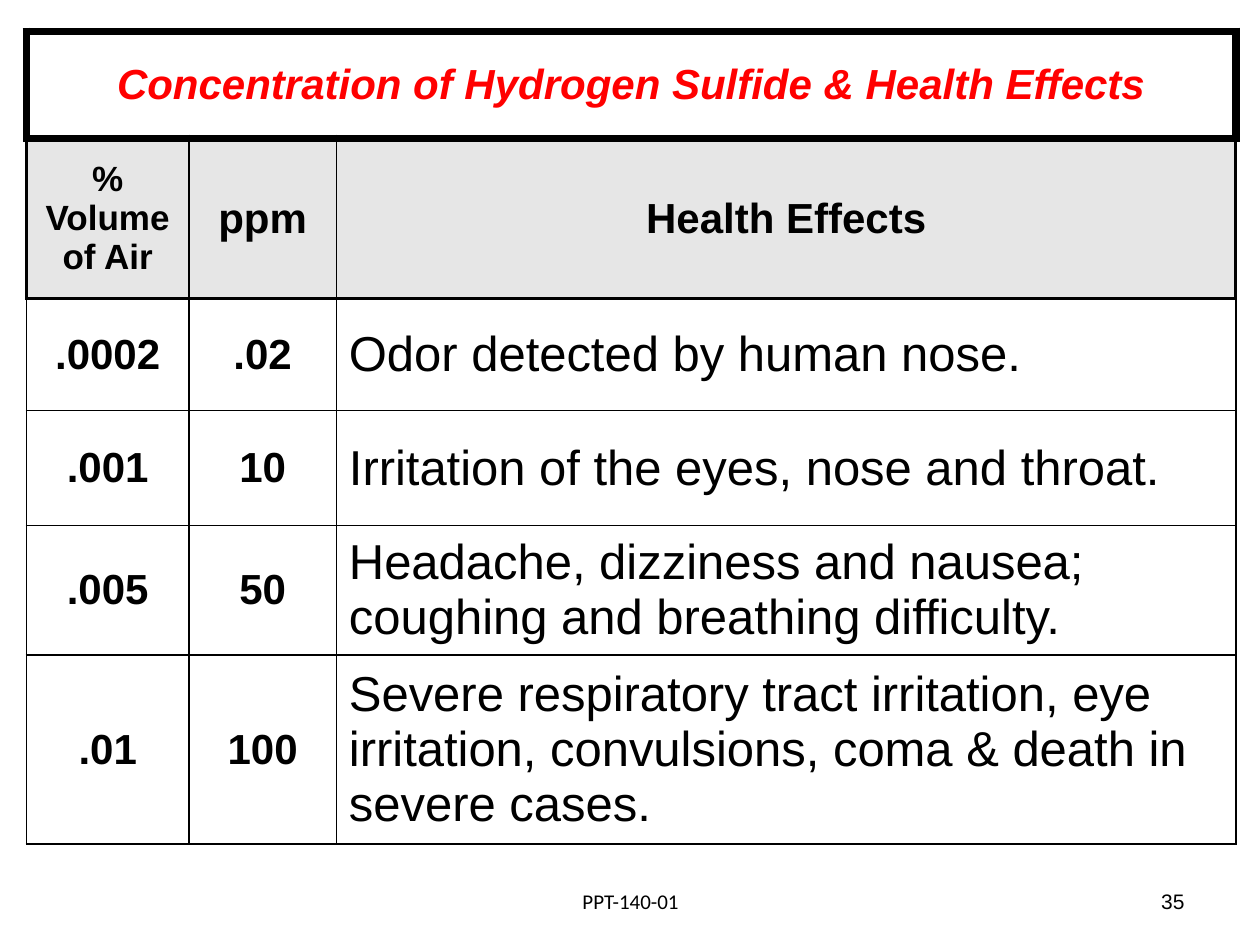
from lxml import etree
from pptx import Presentation
from pptx.dml.color import RGBColor
from pptx.enum.text import MSO_ANCHOR, PP_ALIGN
from pptx.oxml.ns import qn
from pptx.util import Inches, Pt

LEFT, CENTER, RIGHT = PP_ALIGN.LEFT, PP_ALIGN.CENTER, PP_ALIGN.RIGHT
MIDDLE = MSO_ANCHOR.MIDDLE
COLORS = {"text": "000000", "title": "FF0000", "header": "E6E6E6", "line": "000000"}


def write(tf, text, size=24, color="text", bold=False, italic=False,
          align=CENTER, font="Arial"):
    tf.word_wrap = True
    p = tf.paragraphs[0]
    p.alignment = align
    r = p.add_run()
    r.text = text
    r.font.name, r.font.size = font, Pt(size)
    r.font.bold, r.font.italic = bold, italic
    r.font.color.rgb = RGBColor.from_string(COLORS[color])


def set_borders(cell, **widths):
    tcPr = cell._tc.get_or_add_tcPr()
    for i, side in enumerate("LRTB"):
        ln = etree.Element(qn(f"a:ln{side}"), w=str(Pt(widths[side])))
        fill = etree.SubElement(ln, qn("a:solidFill"))
        etree.SubElement(fill, qn("a:srgbClr"), val=COLORS["line"])
        tcPr.insert(i, ln)


prs = Presentation()
prs.slide_width, prs.slide_height = Inches(10), Inches(7.5)
s = prs.slides.add_slide(prs.slide_layouts[6])

# Table grid
col_widths = [1.29, 1.17, 7.14]
row_heights = [0.85, 1.27, 0.89, 0.91, 1.03, 1.5]
rows = [
    ("Concentration of Hydrogen Sulfide & Health Effects", "", ""),
    ("% Volume of Air", "ppm", "Health Effects"),
    (".0002", ".02", "Odor detected by human nose."),
    (".001", "10", "Irritation of the eyes, nose and throat."),
    (".005", "50", "Headache, dizziness and nausea; coughing and breathing difficulty."),
    (".01", "100", "Severe respiratory tract irritation, eye irritation, "
                   "convulsions, coma & death in severe cases."),
]
table = s.shapes.add_table(
    len(rows), len(col_widths), Inches(0.21), Inches(0.25),
    Inches(sum(col_widths)), Inches(sum(row_heights))).table
table.first_row = table.horz_banding = False
for col, width in zip(table.columns, col_widths):
    col.width = Inches(width)
for row, height in zip(table.rows, row_heights):
    row.height = Inches(height)
table.cell(0, 0).merge(table.cell(0, 2))

# Cells: title row, header row, then data rows
last = len(col_widths) - 1
for i, texts in enumerate(rows):
    for j, text in enumerate(texts):
        cell = table.cell(i, j)
        cell.vertical_anchor = MIDDLE
        if i == 1:
            cell.fill.solid()
            cell.fill.fore_color.rgb = RGBColor.from_string(COLORS["header"])
        else:
            cell.fill.background()

        if i == 0:
            set_borders(cell, L=5, R=5, T=5, B=5)
        elif i == 1:
            set_borders(cell, L=2 if j == 0 else 1, R=2 if j == last else 1, T=5, B=2)
        else:
            set_borders(cell, L=1, R=1, T=2 if i == 2 else 1, B=1)

        if i == 0 and text:
            write(cell.text_frame, text, color="title", bold=True, italic=True)
        elif i > 1 and j == last:
            write(cell.text_frame, text, size=28, align=LEFT)
        elif text:
            write(cell.text_frame, text, size=20 if (i, j) == (1, 0) else 24, bold=True)

# Footer and slide number
for text, left, width, align, font in [
    ("PPT-140-01", 3.42, 3.17, CENTER, "Calibri"),
    ("35", 7.17, 2.33, RIGHT, "Arial"),
]:
    tf = s.shapes.add_textbox(Inches(left), Inches(6.95), Inches(width), Inches(0.4)).text_frame
    tf.vertical_anchor = MIDDLE
    write(tf, text, size=12, align=align, font=font)

prs.save("out.pptx")
